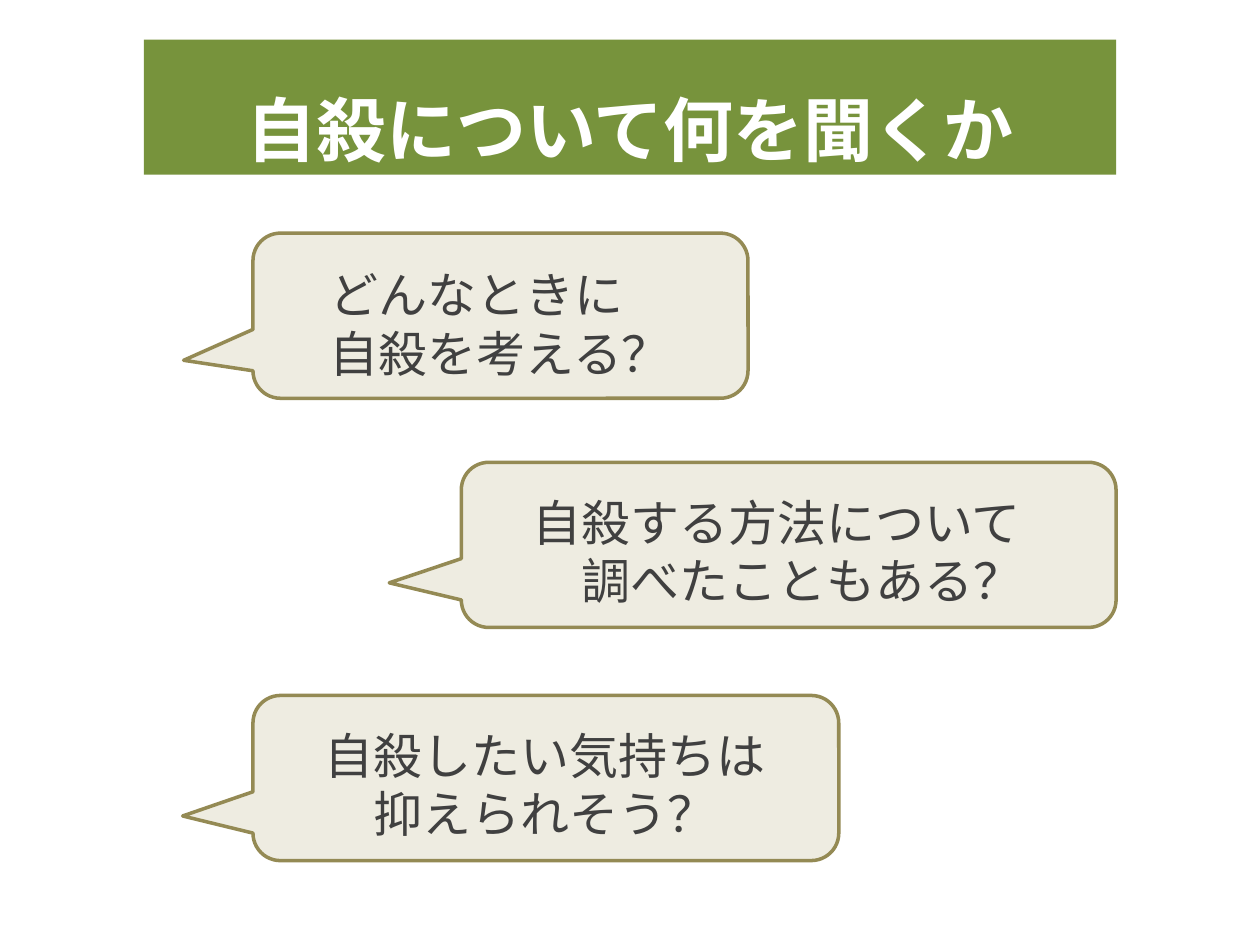
from dataclasses import dataclass

from lxml import etree
from pptx import Presentation
from pptx.dml.color import RGBColor
from pptx.enum.shapes import MSO_SHAPE
from pptx.enum.text import MSO_ANCHOR, PP_ALIGN
from pptx.oxml.ns import qn
from pptx.util import Cm, Pt

RECTANGLE = MSO_SHAPE.RECTANGLE
CALLOUT = MSO_SHAPE.ROUNDED_RECTANGULAR_CALLOUT
MIDDLE = MSO_ANCHOR.MIDDLE
LEFT, CENTER = PP_ALIGN.LEFT, PP_ALIGN.CENTER


@dataclass(frozen=True)
class Theme:
    font: str = "Noto Sans CJK JP"
    title_size: int = 40
    body_size: int = 28
    banner: str = "77933C"
    title_text: str = "FFFFFF"
    bubble: str = "EEECE1"
    outline: str = "948A54"
    body_text: str = "404040"


class SlideBuilder:
    def __init__(self, slide, theme):
        self.slide = slide
        self.theme = theme

    def block(self, kind, box, fill):
        shape = self.slide.shapes.add_shape(kind, *map(Cm, box))
        shape.shadow.inherit = False
        shape.fill.solid()
        shape.fill.fore_color.rgb = RGBColor.from_string(fill)
        shape.line.fill.background()
        return shape

    def text(self, box, lines, size, color, bold=False, align=LEFT, spacing=1.0):
        text_frame = self.slide.shapes.add_textbox(*map(Cm, box)).text_frame
        text_frame.word_wrap = True
        text_frame.vertical_anchor = MIDDLE
        text_frame.text = "\n".join(lines)
        for paragraph in text_frame.paragraphs:
            paragraph.alignment = align
            paragraph.line_spacing = spacing
            font = paragraph.runs[0].font
            font.size = Pt(size)
            font.bold = bold
            font.color.rgb = RGBColor.from_string(color)
            font.name = self.theme.font
            # Japanese text takes its typeface from the East Asian font
            properties = paragraph.runs[0]._r.get_or_add_rPr()
            east_asian = etree.SubElement(properties, qn("a:ea"))
            east_asian.set("typeface", self.theme.font)
        return text_frame

    def title(self, banner_box, text_box, wording):
        theme = self.theme
        self.block(RECTANGLE, banner_box, theme.banner)
        self.text(text_box, [wording], theme.title_size, theme.title_text,
                  bold=True, align=CENTER, spacing=1.5)

    def bubble(self, box, tail, text_box, lines, indented):
        theme = self.theme
        shape = self.block(CALLOUT, box, theme.bubble)
        shape.line.color.rgb = RGBColor.from_string(theme.outline)
        shape.line.width = Pt(2)
        shape.adjustments[0], shape.adjustments[1] = tail
        text_frame = self.text(text_box, lines, theme.body_size, theme.body_text)
        if indented:
            # The second line starts one character further in
            properties = text_frame.paragraphs[1]._p.get_or_add_pPr()
            properties.set("marL", str(Pt(theme.body_size)))


def main():
    presentation = Presentation()
    presentation.slide_width, presentation.slide_height = Cm(25.4), Cm(19.05)
    slide = presentation.slides.add_slide(presentation.slide_layouts[6])
    builder = SlideBuilder(slide, Theme())

    # Title banner
    builder.title((2.9, 0.8, 19.6, 2.72), (0, 1, 25.4, 2.34), "自殺について何を聞くか")

    # Speech bubbles: left, top, width, tail, text position, lines, indent
    bubble_height, text_height = 3.33, 2.29
    bubbles = [
        (5.1, 4.7, 9.98, (-0.64, 0.27), (6.4, 5.38, 8.15),
         ["どんなときに", "自殺を考える？"], False),
        (9.3, 9.32, 13.2, (-0.61, 0.23), (10.49, 9.96, 11.3),
         ["自殺する方法について", "調べたこともある？"], True),
        (5.1, 14.02, 11.81, (-0.62, 0.23), (6.3, 14.66, 9.6),
         ["自殺したい気持ちは", "抑えられそう？"], True),
    ]
    for left, top, width, tail, text_place, lines, indented in bubbles:
        builder.bubble((left, top, width, bubble_height), tail,
                       (*text_place, text_height), lines, indented)

    presentation.save("out.pptx")


if __name__ == "__main__":
    main()
